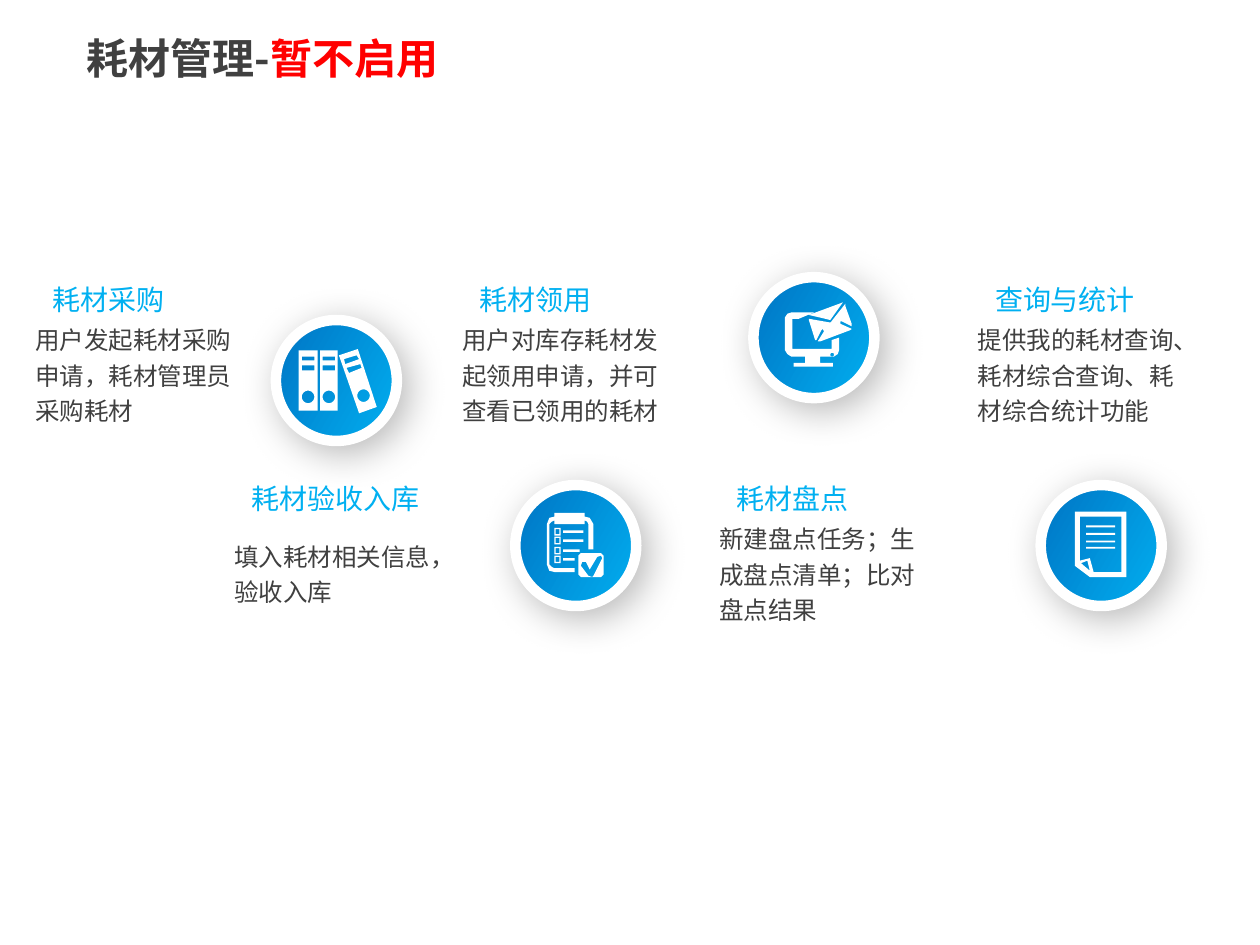
from dataclasses import dataclass
from math import cos, pi, sin

from lxml import etree
from pptx import Presentation
from pptx.dml.color import RGBColor as RGB
from pptx.enum.shapes import MSO_SHAPE as SHAPE
from pptx.enum.text import MSO_ANCHOR as ANCHOR, MSO_AUTO_SIZE as AUTO, PP_ALIGN as ALIGN
from pptx.oxml import parse_xml
from pptx.oxml.ns import qn
from pptx.util import Inches, Pt


@dataclass(frozen=True)
class Theme:
    font: str = "Noto Sans CJK SC"
    dark: RGB = RGB(0x40, 0x40, 0x40)
    alert: RGB = RGB(0xFF, 0, 0)
    white: RGB = RGB(0xFF, 0xFF, 0xFF)
    light_blue: RGB = RGB(0x01, 0xB0, 0xF1)
    deep_blue: RGB = RGB(0, 0x73, 0xC3)
    title: Pt = Pt(24)
    heading: Pt = Pt(16)
    body: Pt = Pt(14)
    ring: Pt = Pt(6)


T = Theme()
SHADOW = (
    '<a:effectLst xmlns:a="http://schemas.openxmlformats.org/drawingml/2006/main">'
    f'<a:outerShdw blurRad="{Pt(22)}" dist="{Pt(6)}" dir="2700000" algn="tl" rotWithShape="0">'
    '<a:srgbClr val="000000"><a:alpha val="28000"/></a:srgbClr></a:outerShdw></a:effectLst>'
)


def rect(left, top, right, bottom):
    return [(left, top), (right, top), (right, bottom), (left, bottom)]


def disc(cx, cy, radius, sides=24):
    angles = [2 * pi * i / sides for i in range(sides)]
    return [(cx + radius * cos(a), cy + radius * sin(a)) for a in angles]


def binder(left, right):
    mid = (left + right) / 2
    return [rect(left, 24, right, 72), disc(mid, 61, 5),
            rect(mid - 5, 29, mid + 5, 32), rect(mid - 5, 36, mid + 5, 40)]


def checklist_row(top, right):
    return [rect(31, top, 36, top + 6), rect(32, top + 1, 35, top + 5),
            rect(38, top + 2, right, top + 4)]


BINDERS = binder(18, 33) + binder(35, 49) + [
    [(50, 28), (65, 23), (80, 69), (66, 74)],
    [(54, 31), (64, 28), (66, 31), (55, 35)],
    [(56, 38), (67, 35), (68, 38), (58, 42)],
    disc(69.5, 60, 5),
]
CHECKLIST = [
    [(31, 22), (55, 22), (55, 25), (59, 26), (62, 31), (62, 51), (58, 51), (58, 31), (57, 29),
     (55, 28), (55, 31), (31, 31), (31, 28), (29, 29), (27, 31), (27, 63), (29, 65), (31, 66),
     (47, 66), (47, 69), (31, 69), (27, 68), (25, 63), (25, 31), (27, 26), (31, 25)],
    [(52, 54), (68, 54), (70, 56), (70, 71), (68, 73), (52, 73), (50, 71), (50, 56)],
    [(52, 64), (58, 72), (61, 73), (62, 72), (69, 58), (68, 56), (65, 57), (59, 67),
     (56, 61), (53, 61)],
] + [part for top, right in [(34, 54), (41, 54), (49, 51), (56, 47)]
     for part in checklist_row(top, right)]
MAIL = [
    [(30, 28), (48, 28), (36, 33), (31, 33), (31, 57), (62, 57), (62, 50), (68, 48), (68, 58),
     (67, 61), (64, 63), (53, 63), (53, 68), (63, 68), (63, 71), (32, 71), (32, 68), (41, 68),
     (41, 63), (30, 63), (27, 61), (25, 58), (25, 32), (27, 29)],
    [(71, 20), (44, 30), (57, 33), (61, 34)],
    [(73, 21), (62, 35), (61, 36), (44, 33), (44, 34), (49, 50), (50, 50), (54, 42), (55, 41),
     (56, 43), (51, 51), (53, 51), (77, 42), (78, 41), (69, 37), (69, 35), (70, 35), (78, 39),
     (78, 37), (73, 23)],
    disc(62.5, 61.5, 1.5),
]
PAGE = [
    [(27, 21), (68, 21), (68, 73), (39, 73), (27, 64)],
    [(31, 60), (39, 58), (42, 69), (64, 69), (64, 25), (31, 25)],
    [(39, 68), (37, 60), (32, 62)],
] + [rect(36, top, 59, top + 1.5) for top in (32, 38, 44, 49)]

BADGES = [(2.19, 2.54, BINDERS), (4.09, 3.85, CHECKLIST), (5.98, 2.2, MAIL), (8.26, 3.85, PAGE)]
BLOCKS = [
    (0.18, 2.14, "耗材采购", "用户发起耗材采购申请，耗材管理员采购耗材"),
    (1.76, 3.72, "耗材验收入库", "填入耗材相关信息，验收入库"),
    (3.57, 2.14, "耗材领用", "用户对库存耗材发起领用申请，并可查看已领用的耗材"),
    (5.61, 3.72, "耗材盘点", "新建盘点任务；生成盘点清单；比对盘点结果"),
    (7.66, 2.14, "查询与统计", "提供我的耗材查询、耗材综合查询、耗材综合统计功能"),
]


def blue_gradient(fill, angle, start=0):
    fill.gradient()
    fill.gradient_angle = angle
    for stop, color, pos in zip(fill.gradient_stops, (T.light_blue, T.deep_blue), (start, 1)):
        stop.color.rgb = color
        stop.position = pos


def add_run(p, text, size, color=None, bold=False):
    r = p.add_run()
    r.text = text
    r.font.size = size
    r.font.bold = bold
    if color is None:
        blue_gradient(r.font.fill, 315, 0.25)
    else:
        r.font.color.rgb = color
    r.font.name = T.font
    etree.SubElement(r._r.get_or_add_rPr(), qn("a:ea")).set("typeface", T.font)


def add_text(s, box, text, size, color=None, wrap=True, anchor=ANCHOR.TOP, auto=AUTO.NONE):
    tf = s.shapes.add_textbox(*map(Inches, box)).text_frame
    tf.word_wrap = wrap
    tf.vertical_anchor = anchor
    tf.auto_size = auto
    p = tf.paragraphs[0]
    p.line_spacing = 1.2
    add_run(p, text, size, color)


def add_title(s, box):
    sp = s.shapes.title
    sp.left, sp.top, sp.width, sp.height = map(Inches, box)
    tf = sp.text_frame
    tf.vertical_anchor = ANCHOR.MIDDLE
    p = tf.paragraphs[0]
    p.alignment = ALIGN.LEFT
    add_run(p, "耗材管理-", T.title, T.dark, bold=True)
    add_run(p, "暂不启用", T.title, T.alert, bold=True)


def add_block(s, left, top, heading, body):
    heading_width = 0.22 * len(heading) + 0.23
    add_text(s, (left + 0.14, top, heading_width, 0.4), heading, T.heading,
             wrap=False, auto=AUTO.SHAPE_TO_FIT_TEXT)
    add_text(s, (left, top + 0.34, 1.83, 0.95), body, T.body, T.dark, anchor=ANCHOR.MIDDLE)


def add_badge(s, left, top, contours):
    x, y, size = Inches(left), Inches(top), Inches(0.96)
    sp = s.shapes.add_shape(SHAPE.OVAL, x, y, size, size)
    blue_gradient(sp.fill, 150)
    sp.line.color.rgb = T.white
    sp.line.width = T.ring
    sp._element.spPr.append(parse_xml(SHADOW))

    outlines = [[(px * 10, py * 10) for px, py in contour] for contour in contours]
    builder = s.shapes.build_freeform(*outlines[0][0], scale=Inches(1) / 1000)
    for i, points in enumerate(outlines):
        if i:
            builder.move_to(*points[0])
        builder.add_line_segments(points[1:], close=True)
    icon = builder.convert_to_shape(x, y)
    icon.shadow.inherit = False
    icon.fill.solid()
    icon.fill.fore_color.rgb = T.white
    icon.line.fill.background()


def main():
    prs = Presentation()
    prs.slide_width, prs.slide_height = Inches(10), Inches(7.5)
    s = prs.slides.add_slide(prs.slide_layouts[5])
    add_title(s, (0.59, 0.12, 8.89, 0.67))
    for block in BLOCKS:
        add_block(s, *block)
    for badge in BADGES:
        add_badge(s, *badge)
    prs.save("out.pptx")


if __name__ == "__main__":
    main()
